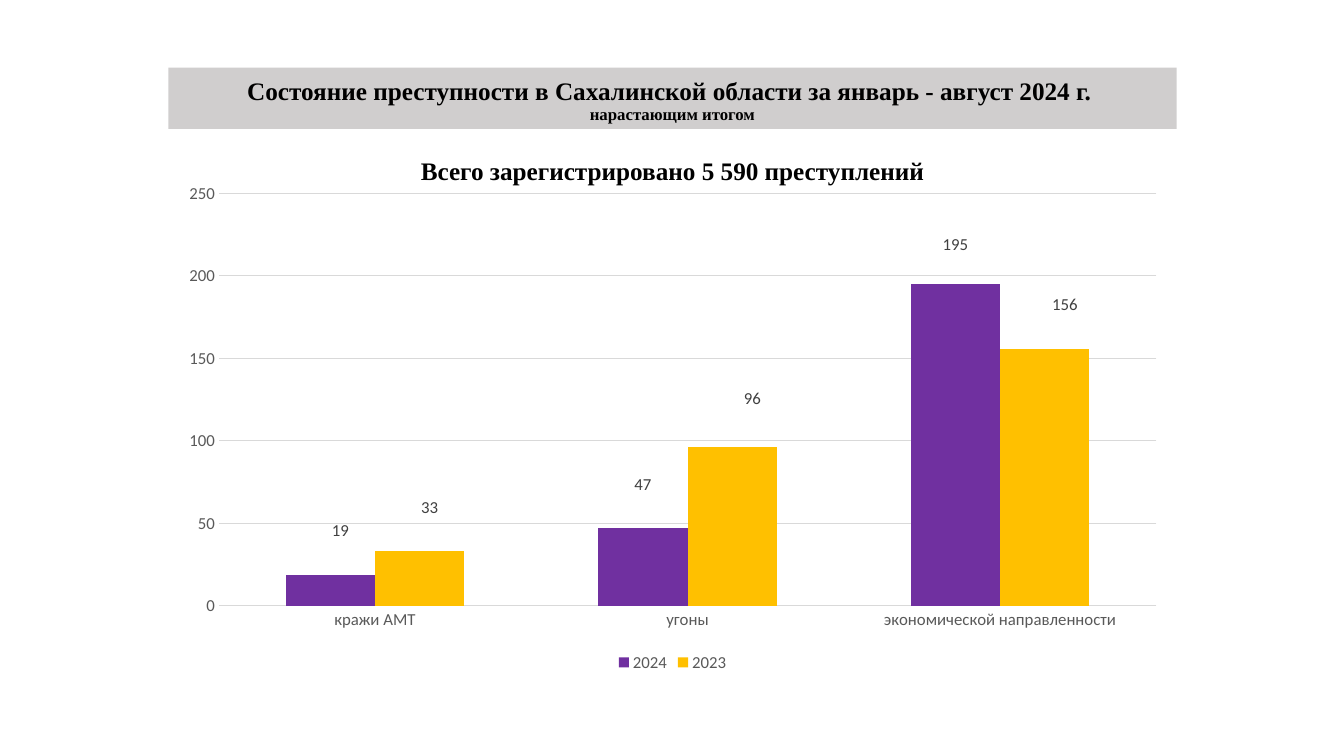
from lxml.etree import SubElement
from pptx import Presentation
from pptx.chart.data import CategoryChartData
from pptx.dml.color import RGBColor
from pptx.enum.chart import XL_CHART_TYPE, XL_LABEL_POSITION, XL_LEGEND_POSITION, XL_TICK_MARK
from pptx.enum.text import MSO_ANCHOR, MSO_AUTO_SIZE, PP_ALIGN
from pptx.oxml.ns import qn
from pptx.util import Inches, Pt

CATEGORIES = ["кражи АМТ", "угоны", "экономической направленности"]
# Year: values, bar colour, label shifts as fractions of the chart size
SERIES = {
    "2024": ([19, 47, 195], "7030A0", [(0.01, -0.06), (0, -0.06), (0, -0.05)]),
    "2023": ([33, 96, 156], "FFC000", [(0.01, -0.06), (0.02, -0.07), (0.02, -0.06)]),
}
PLOT_AREA = {"x": 0.05, "y": 0.04, "w": 0.93, "h": 0.82}


def colour(hex_value):
    return RGBColor.from_string(hex_value)


def add_layout(parent, position, settings):
    """Insert a manual chart layout as the given child of parent."""
    layout = SubElement(parent, qn("c:layout"))
    manual = SubElement(layout, qn("c:manualLayout"))
    for name, value in settings.items():
        SubElement(manual, qn(f"c:{name}")).set("val", str(value))
    parent.insert(position, layout)


class CrimeSlide:
    heading_font = "Times New Roman"
    chart_font = "Calibri"
    left, width = 1.67, 10

    def __init__(self, presentation):
        self.slide = presentation.slides.add_slide(presentation.slide_layouts[0])

    def style_font(self, font, name, size, hex_value, bold=False):
        font.name = name
        font.size = Pt(size)
        font.bold = bold
        font.color.rgb = colour(hex_value)

    def heading(self, shape, top, height, text, sizes, spacing, anchor, fill=None):
        shape.left, shape.top = Inches(self.left), Inches(top)
        shape.width, shape.height = Inches(self.width), Inches(height)
        if fill:
            shape.fill.solid()
            shape.fill.fore_color.rgb = colour(fill)
        frame = shape.text_frame
        frame.text = text
        frame.word_wrap = True
        frame.auto_size = MSO_AUTO_SIZE.NONE
        frame.vertical_anchor = anchor
        paragraph = frame.paragraphs[0]
        paragraph.alignment = PP_ALIGN.CENTER
        paragraph.line_spacing = spacing
        for run, size in zip(paragraph.runs, sizes):
            self.style_font(run.font, self.heading_font, size, "000000", True)
        for line_break in shape.element.iter(qn("a:br")):
            SubElement(line_break, qn("a:rPr")).set("sz", str(sizes[0] * 100))
        return paragraph

    def column_chart(self, top, height):
        data = CategoryChartData()
        data.categories = CATEGORIES
        for year, (values, _, _) in SERIES.items():
            data.add_series(year, values)
        chart = self.slide.shapes.add_chart(
            XL_CHART_TYPE.COLUMN_CLUSTERED, Inches(self.left), Inches(top),
            Inches(self.width), Inches(height), data).chart
        chart.has_title = False
        self.style_font(chart.font, self.chart_font, 10, "000000")

        # Legend
        chart.has_legend = True
        chart.legend.position = XL_LEGEND_POSITION.BOTTOM
        chart.legend.include_in_layout = False
        self.style_font(chart.legend.font, self.chart_font, 12, "595959")

        # Axes
        for axis in (chart.category_axis, chart.value_axis):
            axis.major_tick_mark = axis.minor_tick_mark = XL_TICK_MARK.NONE
            axis.format.line.fill.background()
            self.style_font(axis.tick_labels.font, self.chart_font, 12, "595959")
        value_axis = chart.value_axis
        value_axis.minimum_scale, value_axis.maximum_scale = 0, 250
        value_axis.major_unit = 50
        gridline = value_axis.major_gridlines.format.line
        gridline.color.rgb = colour("D9D9D9")
        gridline.width = Pt(0.75)

        # Plot
        plot = chart.plots[0]
        plot.gap_width, plot.overlap = 150, 0
        plot.vary_by_categories = False
        plot_area = chart.element.find(".//" + qn("c:plotArea"))
        for old_layout in plot_area.findall(qn("c:layout")):
            plot_area.remove(old_layout)
        add_layout(plot_area, 0, {"layoutTarget": "inner", "xMode": "edge",
                                  "yMode": "edge", **PLOT_AREA})
        for series in plot.series:
            self.style_series(series)

    def style_series(self, series):
        _, fill, shifts = SERIES[series.name]
        series.format.fill.solid()
        series.format.fill.fore_color.rgb = colour(fill)
        series.data_labels.show_value = True
        self.style_font(series.data_labels.font, self.chart_font, 12, "404040")
        for index, (x, y) in enumerate(shifts):
            label = series.points[index].data_label
            self.style_font(label.font, self.chart_font, 12, "404040")
            label.position = XL_LABEL_POSITION.OUTSIDE_END
        for label_element, (x, y) in zip(series.data_labels._element.findall(qn("c:dLbl")), shifts):
            add_layout(label_element, 1, {"x": x, "y": y})
        for leader_lines in series.data_labels._element.iter(qn("c:showLeaderLines")):
            leader_lines.set("val", "0")


def main():
    presentation = Presentation()
    presentation.slide_width, presentation.slide_height = Inches(13.33), Inches(7.5)
    crime = CrimeSlide(presentation)
    title, subtitle = crime.slide.placeholders

    # Headings
    crime.heading(
        title, 0.67, 0.61,
        "Состояние преступности в Сахалинской области за январь - август 2024 г. \vнарастающим итогом",
        [18, 12], 0.9, MSO_ANCHOR.BOTTOM, "D0CECE")
    total = crime.heading(
        subtitle, 1.55, 0.36, "Всего зарегистрировано 5 590 преступлений",
        [18], 0.8, MSO_ANCHOR.TOP)
    total.space_before = Pt(10)

    # Chart
    crime.column_chart(1.72, 4.99)
    presentation.save("out.pptx")


if __name__ == "__main__":
    main()
